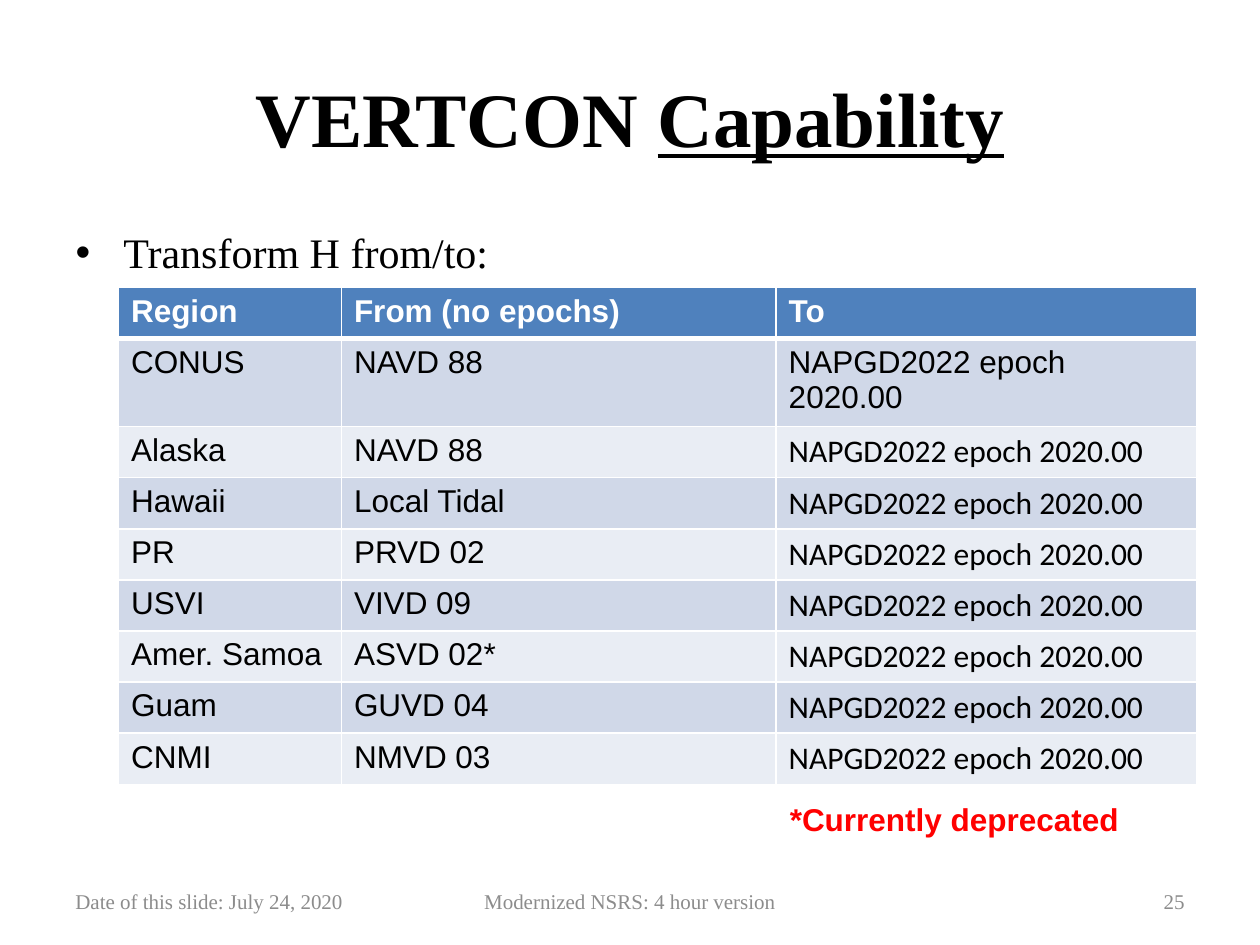
from dataclasses import dataclass

from lxml import etree
from pptx import Presentation
from pptx import util as u
from pptx.dml.color import RGBColor
from pptx.enum import text as t
from pptx.oxml import ns


@dataclass(frozen=True)
class Theme:
    serif: str = "Times New Roman"
    sans: str = "Arial"
    alt: str = "Calibri"
    black: str = "000000"
    white: str = "FFFFFF"
    grey: str = "8C8C8C"
    red: str = "FF0000"
    head: str = "4F81BD"
    bands: tuple = ("D0D8E8", "E9EDF4")
    title: int = 44
    body: int = 24
    cell: int = 18
    foot: int = 12


THEME = Theme()
TARGET = "NAPGD2022 epoch 2020.00"
DATUMS = [
    ("CONUS", "NAVD 88"),
    ("Alaska", "NAVD 88"),
    ("Hawaii", "Local Tidal"),
    ("PR", "PRVD 02"),
    ("USVI", "VIVD 09"),
    ("Amer. Samoa", "ASVD 02*"),
    ("Guam", "GUVD 04"),
    ("CNMI", "NMVD 03"),
]


def style(para, face, size, color, bold=False):
    font = para.font
    font.name, font.size, font.bold = face, u.Pt(size), bold
    font.color.rgb = RGBColor.from_string(color)


def place(shape, box):
    shape.left, shape.top, shape.width, shape.height = map(u.Inches, box)


def add_title(slide, box):
    shape = slide.shapes.title
    place(shape, box)
    para = shape.text_frame.paragraphs[0]
    para.add_run().text = "VERTCON "
    key = para.add_run()
    key.text = "Capability"
    key.font.underline = True
    para.alignment = t.PP_ALIGN.CENTER
    style(para, THEME.serif, THEME.title, THEME.black, True)


def add_body(slide, box):
    shape = slide.placeholders[1]
    place(shape, box)
    para = shape.text_frame.paragraphs[0]
    para.text = "Transform H from/to:"
    para.space_before = u.Pt(0)
    props = para._p.get_or_add_pPr()
    props.set("marL", str(u.Inches(0.38)))
    props.set("indent", str(u.Inches(-0.38)))
    etree.SubElement(props, ns.qn("a:buFont")).set("typeface", THEME.sans)
    etree.SubElement(props, ns.qn("a:buChar")).set("char", "•")
    style(para, THEME.serif, THEME.body, THEME.black)


def add_edges(cell, base):
    """Draw white borders, the bottom one base points wide."""
    props = cell._tc.get_or_add_tcPr()
    for side, width in (("L", 1), ("R", 1), ("T", 1), ("B", base)):
        line = etree.SubElement(props, ns.qn(f"a:ln{side}"), w=str(u.Pt(width)))
        fill = etree.SubElement(line, ns.qn("a:solidFill"))
        etree.SubElement(fill, ns.qn("a:srgbClr"), val=THEME.white)


def add_grid(slide, box):
    rows = [("Region", "From (no epochs)", "To")]
    rows += [(*pair, TARGET) for pair in DATUMS]
    widths = (1.77, 3.45, 3.34)
    grid = slide.shapes.add_table(len(rows), len(widths), *map(u.Inches, box)).table
    for col, width in zip(grid.columns, widths):
        col.width = u.Inches(width)
    for r, row in enumerate(rows):
        head = r == 0
        fill = THEME.head if head else THEME.bands[(r - 1) % 2]
        for c, words in enumerate(row):
            cell = grid.cell(r, c)
            cell.text = words
            face = THEME.alt if r > 1 and c == 2 else THEME.sans
            color = THEME.white if head else THEME.black
            style(cell.text_frame.paragraphs[0], face, THEME.cell, color, head)
            add_edges(cell, 3 if head or r == 0 else 1)
            cell.fill.solid()
            cell.fill.fore_color.rgb = RGBColor.from_string(fill)


def add_note(slide, box):
    frame = slide.shapes.add_textbox(*map(u.Inches, box)).text_frame
    frame.word_wrap = False
    frame.auto_size = t.MSO_AUTO_SIZE.SHAPE_TO_FIT_TEXT
    para = frame.paragraphs[0]
    para.text = "*Currently deprecated"
    style(para, THEME.sans, THEME.cell, THEME.red, True)


def add_foot(slide, box):
    left, top, width, height = box
    align = t.PP_ALIGN
    parts = [
        (0, 2.33, "Date of this slide: July 24, 2020", align.LEFT),
        ((width - 3.17) / 2, 3.17, "Modernized NSRS: 4 hour version", align.CENTER),
        (width - 2.33, 2.33, "25", align.RIGHT),
    ]
    for shift, span, words, side in parts:
        spot = map(u.Inches, (left + shift, top, span, height))
        frame = slide.shapes.add_textbox(*spot).text_frame
        frame.word_wrap = True
        frame.vertical_anchor = t.MSO_ANCHOR.MIDDLE
        para = frame.paragraphs[0]
        para.text, para.alignment = words, side
        style(para, THEME.serif, THEME.foot, THEME.grey)


def main():
    deck = Presentation()
    deck.slide_width, deck.slide_height = u.Inches(10), u.Inches(7.5)
    slide = deck.slides.add_slide(deck.slide_layouts[1])
    add_title(slide, (0.5, 0.3, 9, 1.25))
    add_body(slide, (0.5, 1.75, 9, 4.95))
    add_foot(slide, (0.5, 6.95, 9, 0.4))
    add_grid(slide, (0.94, 2.28, 8.56, 3.65))
    add_note(slide, (6.17, 6.3, 2.84, 0.4))
    deck.save("out.pptx")


if __name__ == "__main__":
    main()
